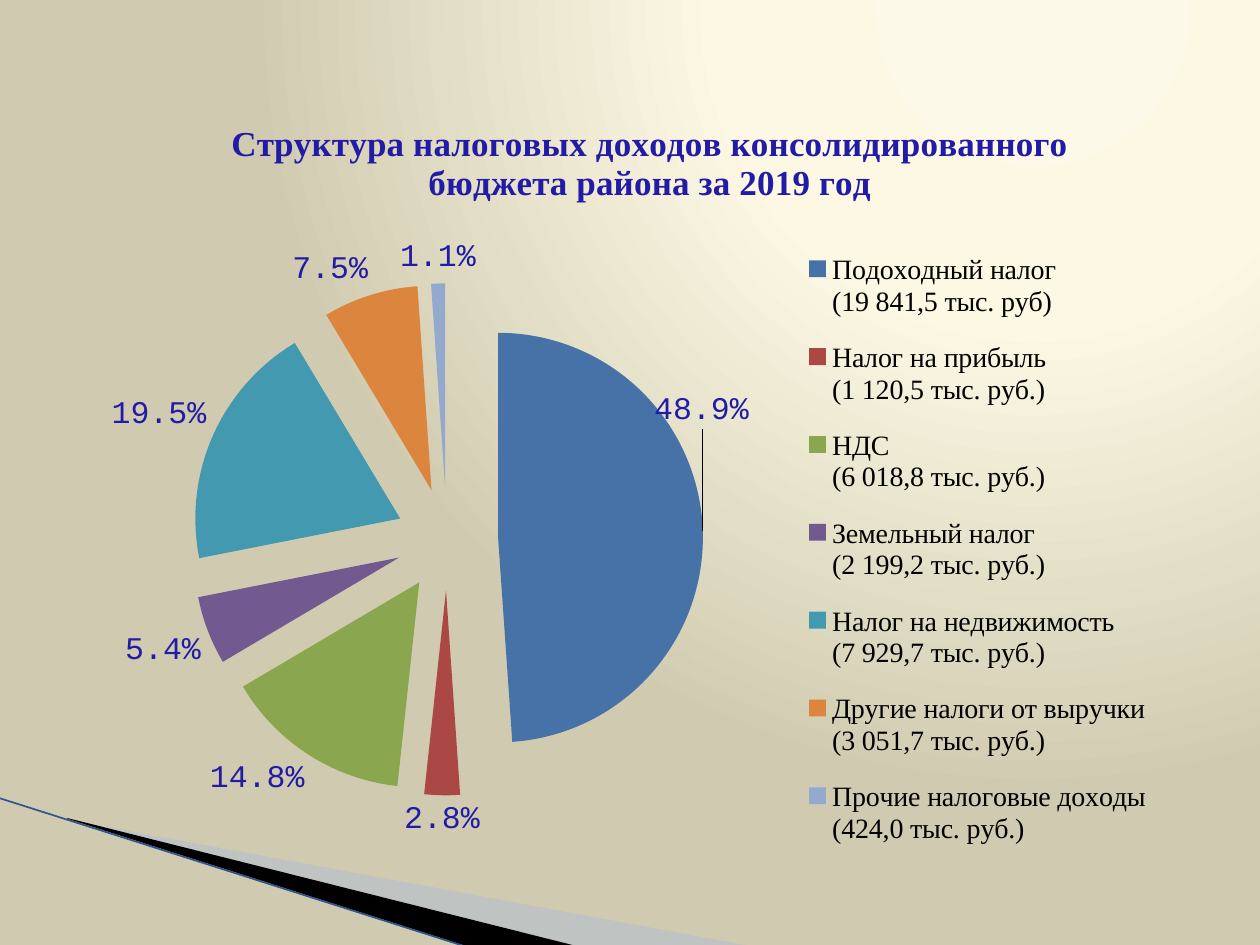
from dataclasses import dataclass

from lxml import etree
from pptx import Presentation
from pptx.chart.data import CategoryChartData
from pptx.dml.color import RGBColor
from pptx.enum.chart import XL_CHART_TYPE, XL_LABEL_POSITION, XL_LEGEND_POSITION
from pptx.enum.shapes import MSO_CONNECTOR
from pptx.oxml import parse_xml
from pptx.oxml.ns import qn
from pptx.util import Emu, Pt

PIE = XL_CHART_TYPE.PIE
OUTER = XL_LABEL_POSITION.OUTSIDE_END
RIGHT = XL_LEGEND_POSITION.RIGHT
STRAIGHT = MSO_CONNECTOR.STRAIGHT

BLACK = RGBColor(0x00, 0x00, 0x00)
NAVY = RGBColor(0x22, 0x1B, 0xA5)
EDGE = RGBColor(0x2F, 0x55, 0x90)
MIST = RGBColor(0xA7, 0xB9, 0xDB)
BLUE = RGBColor(0x46, 0x72, 0xA8)
RED = RGBColor(0xAB, 0x47, 0x44)
GREEN = RGBColor(0x8A, 0xA6, 0x4F)
PURPLE = RGBColor(0x72, 0x59, 0x90)
TEAL = RGBColor(0x42, 0x99, 0xB0)
ORANGE = RGBColor(0xDC, 0x85, 0x3E)
PALE = RGBColor(0x93, 0xA9, 0xCE)
GLOW = ((0, RGBColor(0xFD, 0xF9, 0xE8)),
        (40, RGBColor(0xFC, 0xF8, 0xE4)),
        (100, RGBColor(0xD0, 0xCB, 0xB0)))

A_NS = "http://schemas.openxmlformats.org/drawingml/2006/main"
C_NS = "http://schemas.openxmlformats.org/drawingml/2006/chart"
P_NS = "http://schemas.openxmlformats.org/presentationml/2006/main"

SCALE = 914400 / 126
WIDE, HIGH = 1260, 945
FRAME = (84, 96, 1131, 774)
TITLE = "Структура налоговых доходов консолидированного бюджета района за 2019 год"
TITLE_FONT = {"name": "Times New Roman", "size": Pt(20), "bold": True}
KEY_FONT = {"name": "Times New Roman", "size": Pt(16), "bold": False}
LABEL_FONT = {"name": "Courier New", "size": Pt(18), "bold": False}


@dataclass
class Tax:
    name: str
    sum: str
    share: float
    color: RGBColor


@dataclass
class Blade:
    points: tuple
    color: RGBColor
    alpha: int = 100


TAXES = (
    Tax("Подоходный налог", "(19 841,5 тыс. руб)", 0.489, BLUE),
    Tax("Налог на прибыль", "(1 120,5 тыс. руб.)", 0.028, RED),
    Tax("НДС", "(6 018,8 тыс. руб.)", 0.148, GREEN),
    Tax("Земельный налог", "(2 199,2 тыс. руб.)", 0.054, PURPLE),
    Tax("Налог на недвижимость", "(7 929,7 тыс. руб.)", 0.195, TEAL),
    Tax("Другие налоги от выручки", "(3 051,7 тыс. руб.)", 0.075, ORANGE),
    Tax("Прочие налоговые доходы", "(424,0 тыс. руб.)", 0.011, PALE),
)
BLADES = (
    Blade(((69, 820), (750, 946), (575, 946), (69, 819)), MIST, 40),
    Blade(((67, 818), (576, 946), (469, 947), (68, 819)), BLACK),
)


def px(size: int) -> Emu:
    return Emu(round(size * SCALE))


def style(font, form: dict, color: RGBColor) -> None:
    for key, value in form.items():
        setattr(font, key, value)
    font.color.rgb = color


def layout(**parts) -> etree.Element:
    root = etree.Element(f"{{{C_NS}}}layout", nsmap={"c": C_NS})
    box = etree.SubElement(root, f"{{{C_NS}}}manualLayout")
    for key, value in parts.items():
        etree.SubElement(box, f"{{{C_NS}}}{key}").set("val", str(value))
    return parse_xml(etree.tostring(root))


def ratio(wide: int, high: int) -> tuple[float, float]:
    return wide / FRAME[2], high / FRAME[3]


def place(left: int, top: int, wide: int = 0, high: int = 0) -> dict:
    x, y = ratio(left - FRAME[0], top - FRAME[1])
    spot = {"xMode": "edge", "yMode": "edge", "x": x, "y": y}
    if wide:
        spot["w"], spot["h"] = ratio(wide, high)
    return spot


def shift(right: int, down: int) -> dict:
    return dict(zip("xy", ratio(right, down)))


def put_layout(node, after: str, **parts) -> None:
    for old in node.findall(qn("c:layout")):
        node.remove(old)
    part = layout(**parts)
    mark = node.find(qn(after)) if after else None
    if mark is None:
        node.insert(0, part)
    else:
        mark.addnext(part)


def paint_back(slide) -> None:
    stops = "".join(
        f'<a:gs pos="{spot * 1000}"><a:srgbClr val="{color}"/></a:gs>'
        for spot, color in GLOW)
    back = parse_xml(
        f'<p:bg xmlns:p="{P_NS}" xmlns:a="{A_NS}"><p:bgPr>'
        f'<a:gradFill rotWithShape="1"><a:gsLst>{stops}</a:gsLst>'
        '<a:path path="circle"><a:fillToRect l="65000" b="98000"/></a:path>'
        '</a:gradFill><a:effectLst/></p:bgPr></p:bg>')
    slide.element.cSld.insert(0, back)


def add_blade(slide, blade: Blade) -> None:
    first, *rest = blade.points
    pen = slide.shapes.build_freeform(*first, scale=SCALE)
    pen.add_line_segments(rest, close=True)
    shape = pen.convert_to_shape()
    shape.shadow.inherit = False
    shape.fill.solid()
    shape.fill.fore_color.rgb = blade.color
    shape.line.fill.background()
    if blade.alpha < 100:
        tint = shape._element.spPr.find(f".//{qn('a:srgbClr')}")
        etree.SubElement(tint, qn("a:alpha")).set("val", str(blade.alpha * 1000))


def add_edge(slide) -> None:
    line = slide.shapes.add_connector(STRAIGHT, px(-1), px(798), px(467), px(947))
    line.line.color.rgb = EDGE
    line.line.width = Pt(0.95)
    etree.SubElement(line._element.spPr, qn("a:effectLst"))


def add_pie(slide) -> None:
    data = CategoryChartData(number_format="0.0%")
    data.categories = [f"{tax.name}\n{tax.sum}" for tax in TAXES]
    data.add_series("Series 1", [tax.share for tax in TAXES])
    chart = slide.shapes.add_chart(PIE, *map(px, FRAME), data).chart
    style(chart.font, LABEL_FONT, BLACK)

    chart.has_title = True
    head = chart.chart_title.text_frame
    head.text = TITLE
    style(head.paragraphs[0].runs[0].font, TITLE_FONT, NAVY)
    put_layout(chart.chart_title._element, "c:tx", **place(225, 114))

    chart.has_legend = True
    key = chart.legend
    key.position = RIGHT
    key.include_in_layout = False
    style(key.font, KEY_FONT, BLACK)
    put_layout(key._element, "c:legendPos", **place(785, 230, 385, 641))

    plot = chart.plots[0]
    plot.vary_by_categories = True
    area = chart._chartSpace.find(f".//{qn('c:plotArea')}")
    put_layout(area, "", layoutTarget="inner", **place(191, 283, 512, 513))

    series = plot.series[0]
    burst = etree.Element(qn("c:explosion"))
    burst.set("val", "25")
    series._element.find(qn("c:tx")).addnext(burst)
    for spot, tax in enumerate(TAXES):
        fill = series.points[spot].format.fill
        fill.solid()
        fill.fore_color.rgb = tax.color

    labels = series.data_labels
    form = {"show_value": True, "show_percentage": False, "position": OUTER,
            "number_format": "0.0%", "number_format_is_linked": False}
    for name, value in form.items():
        setattr(labels, name, value)
    style(labels.font, LABEL_FONT, NAVY)
    label = series.points[0].data_label
    style(label.font, LABEL_FONT, NAVY)
    label.position = OUTER
    node = labels._element.find(qn("c:dLbl"))
    put_layout(node, "c:idx", **shift(-56, -119))


def main() -> None:
    deck = Presentation()
    deck.slide_width, deck.slide_height = px(WIDE), px(HIGH)
    slide = deck.slides.add_slide(deck.slide_layouts[6])
    paint_back(slide)
    for blade in BLADES:
        add_blade(slide, blade)
    add_edge(slide)
    add_pie(slide)
    deck.save("out.pptx")


if __name__ == "__main__":
    main()
